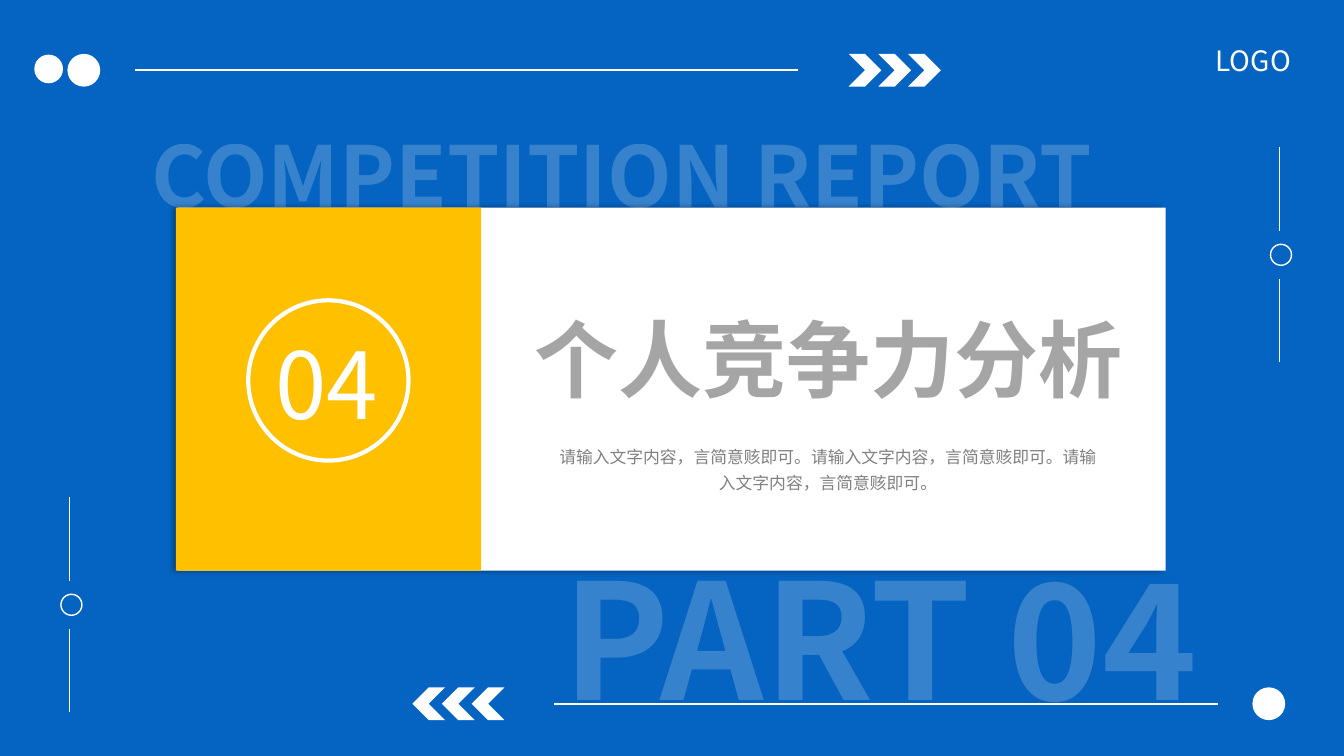
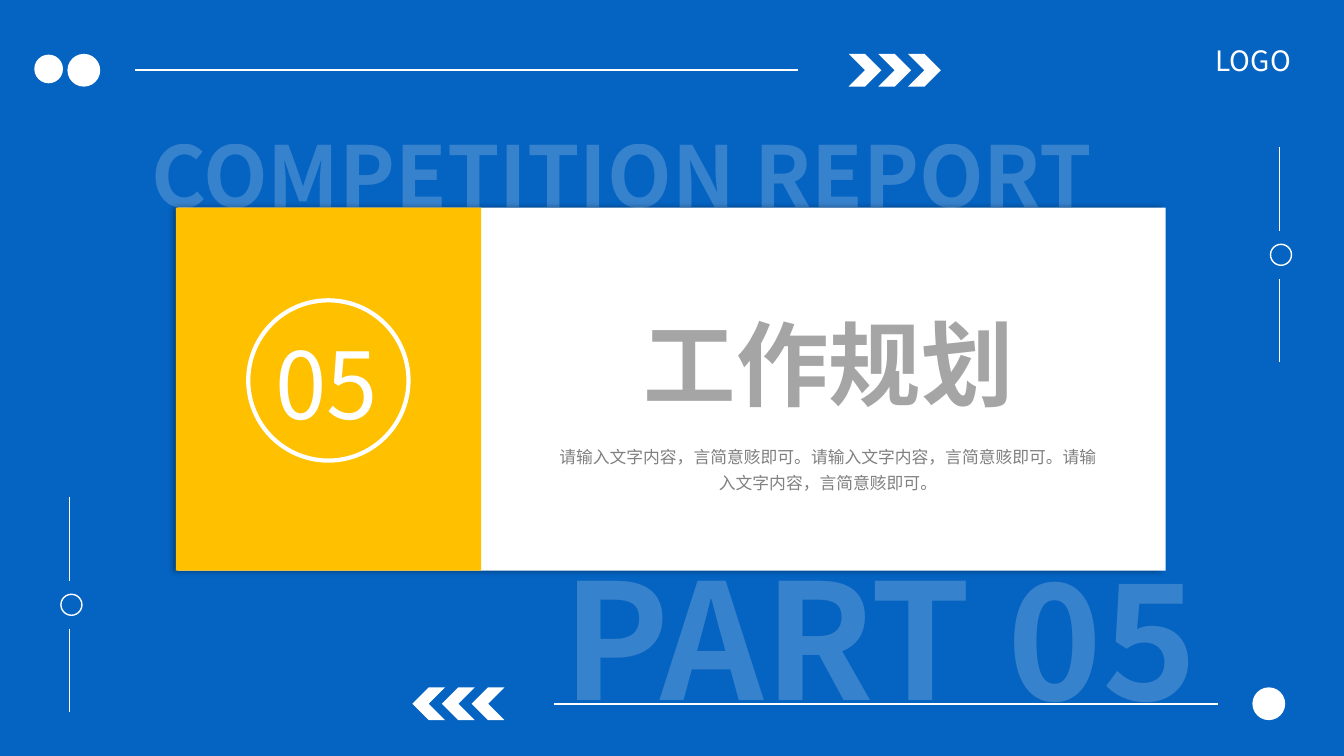
from lxml import etree
from pptx import Presentation
from pptx.dml.color import RGBColor
from pptx.enum.shapes import MSO_CONNECTOR, MSO_SHAPE
from pptx.enum.text import MSO_AUTO_SIZE, PP_ALIGN
from pptx.oxml.ns import qn
from pptx.util import Pt

STRAIGHT = MSO_CONNECTOR.STRAIGHT
CHEVRON, ELLIPSE, RECTANGLE = MSO_SHAPE.CHEVRON, MSO_SHAPE.OVAL, MSO_SHAPE.RECTANGLE
CENTER, JUSTIFY = PP_ALIGN.CENTER, PP_ALIGN.JUSTIFY
FIT_TEXT = MSO_AUTO_SIZE.SHAPE_TO_FIT_TEXT

FONT = "Noto Sans CJK SC"
COLORS = {
    "blue": "0563C1",
    "yellow": "FFC000",
    "white": "FFFFFF",
    "title": "A5A5A5",
    "body": "808080",
    "shadow": "000000",
}
SHADOW = {"blurRad": Pt(4), "dist": Pt(3), "dir": 180 * 60000, "algn": "r", "rotWithShape": 0}
SECTIONS = [
    {"number": "04", "title": "个人竞争力分析", "size": 60, "height": 80},
    {"number": "05", "title": "工作规划", "size": 66, "height": 87},
]
BODY = "请输入文字内容，言简意赅即可。" * 3

DOT = 23.4
CHEVRON_STEP = 21.2
TOP_BAND, BOTTOM_BAND = 38.5, 491
CARD_TOP, CARD_HEIGHT = 148.4, 259.2
SIDE_MARKS = [(49.7, 355), (913.7, 105)]
SIDE_LENGTH, SIDE_STEP = 59.8, 94
LINES = [(96.5, 50.2, 570.2, 50.2, 1.5), (396, 502.7, 869.8, 502.7, 1.5)]
for x, top in SIDE_MARKS:
    for start in (top, top + SIDE_STEP):
        LINES.append((x, start, x, start + SIDE_LENGTH, 0.5))


def add_figure(page, kind, left, top, width, height, fill=None, line=None):
    figure = page.shapes.add_shape(kind, Pt(left), Pt(top), Pt(width), Pt(height))
    figure.shadow.inherit = False
    if fill:
        figure.fill.solid()
        figure.fill.fore_color.rgb = RGBColor.from_string(COLORS[fill])
    else:
        figure.fill.background()
    if line:
        figure.line.color.rgb = RGBColor.from_string(COLORS["white"])
        figure.line.width = Pt(line)
    else:
        figure.line.fill.background()
    return figure


def add_text(page, text, left, top, width, height, size, color="white",
             bold=False, align=CENTER, spacing=None, alpha=None):
    box = page.shapes.add_textbox(Pt(left), Pt(top), Pt(width), Pt(height))
    para = box.text_frame.paragraphs[0]
    span = para.add_run()
    span.text = text
    formats = [
        (box.text_frame, {"word_wrap": True, "auto_size": FIT_TEXT}),
        (para, {"alignment": align, "line_spacing": spacing}),
        (span.font, {"name": FONT, "size": Pt(size), "bold": bold}),
    ]
    for target, values in formats:
        for name, value in values.items():
            setattr(target, name, value)
    span.font.color.rgb = RGBColor.from_string(COLORS[color])
    for properties in box.element.iter(qn("a:rPr")):
        etree.SubElement(properties, qn("a:ea"), typeface=FONT)
    if alpha:
        tint = next(box.element.iter(qn("a:srgbClr")))
        etree.SubElement(tint, qn("a:alpha"), val=str(alpha * 1000))


deck = Presentation()
deck.slide_width, deck.slide_height = Pt(960), Pt(540)
background = deck.slide_master.background.fill
background.solid()
background.fore_color.rgb = RGBColor.from_string(COLORS["blue"])

for section in SECTIONS:
    page = deck.slides.add_slide(deck.slide_layouts[6])
    add_text(page, "COMPETITION REPORT", 60, 49, 768, 103.7, 60,
             bold=True, spacing=1.5, alpha=20)

    for x1, y1, x2, y2, weight in LINES:
        rule = page.shapes.add_connector(STRAIGHT, Pt(x1), Pt(y1), Pt(x2), Pt(y2))
        rule.line.color.rgb = RGBColor.from_string(COLORS["white"])
        rule.line.width = Pt(weight)
        etree.SubElement(rule.element.find(qn("p:spPr")), qn("a:effectLst"))

    for x, top in SIDE_MARKS:
        add_figure(page, ELLIPSE, x - 6.2, top + 69.5, 15, 15, line=1)

    for left, top, diameter in [(24.5, 39, 20.5), (48.2, TOP_BAND, DOT), (894.6, BOTTOM_BAND, DOT)]:
        add_figure(page, ELLIPSE, left, top, diameter, diameter, "white")

    for first, top, rotation in [(606.2, TOP_BAND, 0), (294.5, BOTTOM_BAND, 180)]:
        for index in range(3):
            chevron = add_figure(page, CHEVRON, first + index * CHEVRON_STEP, top, DOT, DOT, "white")
            chevron.rotation = rotation

    card = add_figure(page, RECTANGLE, 127.2, CARD_TOP, 705.4, CARD_HEIGHT, "white")
    effects = next(card.element.iter(qn("a:effectLst")))
    shadow = etree.SubElement(effects, qn("a:outerShdw"))
    for name, value in SHADOW.items():
        shadow.set(name, str(value))
    shade = etree.SubElement(shadow, qn("a:srgbClr"), val=COLORS["shadow"])
    etree.SubElement(shade, qn("a:alpha"), val="40000")

    add_text(page, section["title"], 368, 216, 448, section["height"], section["size"],
             "title", bold=True)
    add_text(page, "PART " + section["number"], 350, 381.6, 557.3, 146.9, 115,
             bold=True, alpha=20)
    add_text(page, BODY, 391, 311, 401, 43.2, 12, "body", spacing=1.3)
    add_text(page, "LOGO", 861.2, 27.4, 77.8, 31.7, 20, align=JUSTIFY)

    add_figure(page, RECTANGLE, 125.6, CARD_TOP, 218, CARD_HEIGHT, "yellow")
    add_figure(page, ELLIPSE, 177.3, 214.5, 114.5, 114.5, line=3)
    add_text(page, section["number"], 167.6, 230.4, 131.8, 87.1, 66)

deck.save("out.pptx")
